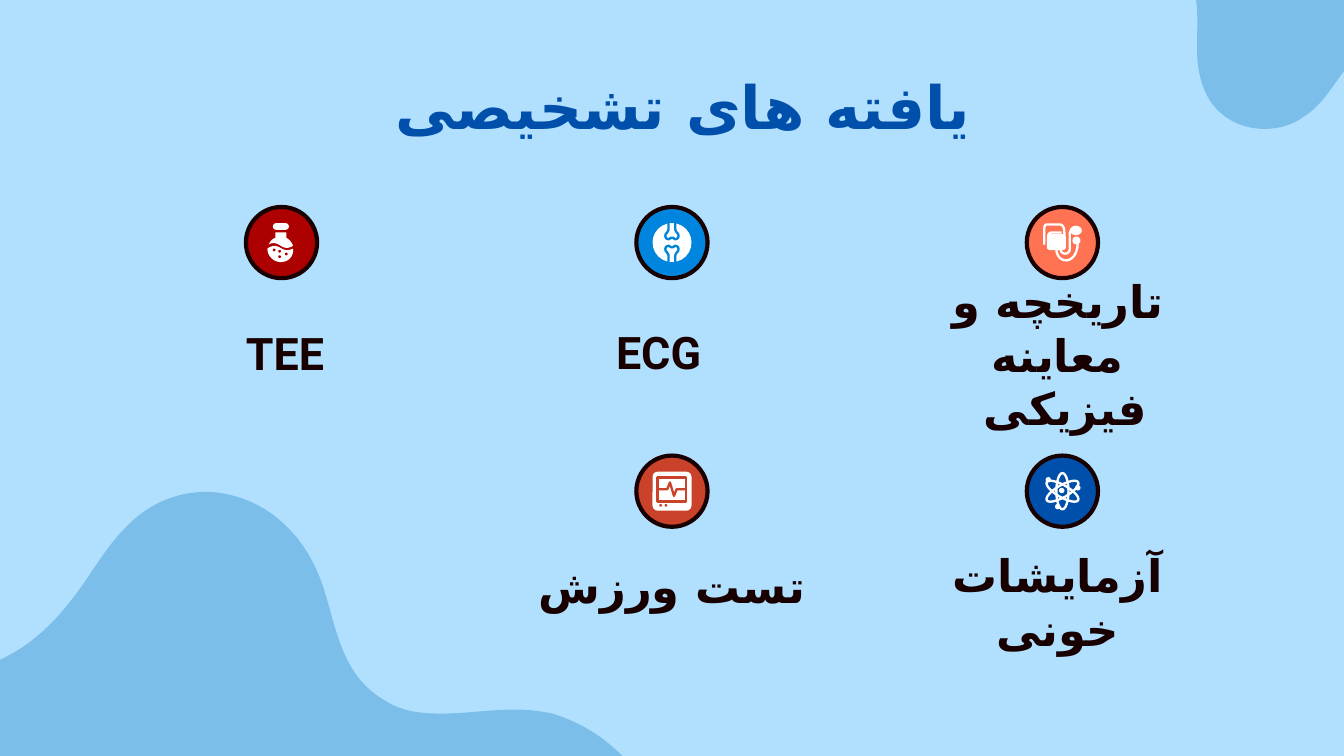
from lxml.etree import SubElement
from pptx import Presentation
from pptx.dml.color import RGBColor
from pptx.enum.shapes import MSO_SHAPE as SHAPE
from pptx.enum.text import MSO_ANCHOR as ANCHOR, PP_ALIGN as ALIGN
from pptx.oxml.ns import qn
from pptx.util import Inches, Pt

SKY, WAVE, INK, NAVY, WHITE = "B1E0FF", "7CBEEA", "180000", "004FAB", "FFFFFF"
PERSIAN_FONT = "DejaVu Sans"
WIDTH = 10
HEIGHT = WIDTH * 9 / 16
BADGE, ICON = 0.53, 0.29
COLS, ROWS = (1.83, (WIDTH - BADGE) / 2, 7.64), (1.54, 3.39)


def rgb(value):
    return RGBColor.from_string(value)


def paint(sp, fill=None, line=None, width=1.25):
    sp.shadow.inherit = False
    if fill:
        sp.fill.solid()
        sp.fill.fore_color.rgb = rgb(fill)
    else:
        sp.fill.background()
    if line:
        sp.line.color.rgb = rgb(line)
        sp.line.width = Pt(width)
    else:
        sp.line.fill.background()
    return sp


def preset(s, kind, x, y, w, h, **style):
    sp = s.shapes.add_shape(kind, Inches(x), Inches(y), Inches(w), Inches(h))
    return paint(sp, **style)


def dot(s, cx, cy, r, **style):
    return preset(s, SHAPE.OVAL, cx - r, cy - r, 2 * r, 2 * r, **style)


def trace(start, *parts, steps=12):
    """Turn lines (x, y) and cubic curves (x1, y1, x2, y2, x, y) into points."""
    pts = [start]
    for part in parts:
        if len(part) == 2:
            pts.append(part)
            continue
        ctrl = [pts[-1], part[:2], part[2:4], part[4:]]
        for i in range(1, steps + 1):
            t = i / steps
            weights = ((1 - t) ** 3, 3 * t * (1 - t) ** 2, 3 * t * t * (1 - t), t ** 3)
            pts.append(tuple(sum(k * c[axis] for k, c in zip(weights, ctrl))
                             for axis in (0, 1)))
    return pts


def outline(s, x, y, pts, close=True, **style):
    pts = [(Inches(x + px), Inches(y + py)) for px, py in pts]
    builder = s.shapes.build_freeform(*pts[0])
    builder.add_line_segments(pts[1:], close=close)
    return paint(builder.convert_to_shape(), **style)


def text_box(s, x, y, w, h, text, anchor=ANCHOR.MIDDLE, **font):
    tf = s.shapes.add_textbox(Inches(x), Inches(y), Inches(w), Inches(h)).text_frame
    frame = dict(word_wrap=True, vertical_anchor=anchor, margin_left=Inches(0.1),
                 margin_right=Inches(0.1), margin_top=Inches(0.1), margin_bottom=Inches(0.1))
    for name, value in frame.items():
        setattr(tf, name, value)
    p = tf.paragraphs[0]
    p.alignment = ALIGN.CENTER
    p._p.get_or_add_pPr().set("rtl", "1")
    r = p.add_run()
    r.text = text
    color = font.pop("color")
    for name, value in font.items():
        setattr(r.font, name, value)
    r.font.color.rgb = rgb(color)
    SubElement(r._r.get_or_add_rPr(), qn("a:cs"), typeface=PERSIAN_FONT)


def waves(s):
    bottom_left = trace(
        (1.53, 3.66), (1.36, 3.66, 1.18, 3.72, 1.04, 3.83), (0.86, 3.97, 0.74, 4.17, 0.61, 4.36),
        (0.46, 4.57, 0.29, 4.76, 0.06, 4.88), (0, 4.91), (0, HEIGHT), (4.63, HEIGHT),
        (4.49, 5.48, 4.31, 5.37, 4.11, 5.31), (4.02, 5.29, 3.92, 5.28, 3.83, 5.28),
        (3.65, 5.28, 3.46, 5.31, 3.28, 5.31), (3.12, 5.31, 2.98, 5.29, 2.86, 5.21),
        (2.74, 5.14, 2.65, 5.04, 2.59, 4.92), (2.46, 4.67, 2.45, 4.39, 2.31, 4.15),
        (2.19, 3.93, 1.98, 3.75, 1.74, 3.69), (1.67, 3.67, 1.6, 3.66, 1.53, 3.66))
    top_right = trace(
        (8.9, 0), (8.92, 0.13, 8.9, 0.3, 8.91, 0.45), (8.92, 0.56, 8.95, 0.67, 9.01, 0.76),
        (9.1, 0.89, 9.25, 0.96, 9.41, 0.96), (9.51, 0.96, 9.62, 0.93, 9.7, 0.87),
        (9.83, 0.79, 9.91, 0.65, WIDTH, 0.53), (WIDTH, 0))
    for pts in (bottom_left, top_right):
        outline(s, 0, 0, pts, fill=WAVE)


def flask_icon(s, x, y, color):
    cap = preset(s, SHAPE.ROUNDED_RECTANGLE, x + 0.08, y, 0.12, 0.05, fill=WHITE)
    cap.adjustments[0] = 0.5
    glass = trace((0.1, 0.07), (0.1, 0.11), (0.07, 0.12, 0.06, 0.14, 0.05, 0.16),
                  (0.08, 0.14, 0.11, 0.15, 0.14, 0.17), (0.17, 0.19, 0.2, 0.19, 0.23, 0.17),
                  (0.22, 0.14, 0.2, 0.12, 0.18, 0.11), (0.18, 0.07))
    liquid = trace((0.04, 0.19), (0.08, 0.16, 0.11, 0.17, 0.13, 0.18),
                   (0.16, 0.2, 0.19, 0.21, 0.23, 0.19), (0.24, 0.24, 0.2, 0.29, 0.14, 0.29),
                   (0.09, 0.29, 0.04, 0.25, 0.04, 0.19))
    for pts in (glass, liquid):
        outline(s, x, y, pts, fill=WHITE)
    for cx, cy in ((0.09, 0.2), (0.13, 0.21), (0.18, 0.23), (0.13, 0.25)):
        dot(s, x + cx, y + cy, 0.01, fill=color)


def joint_icon(s, x, y, color):
    preset(s, SHAPE.OVAL, x, y, ICON, ICON, fill=WHITE)
    half = trace((0.12, -0.01), (0.12, 0.04), (0.12, 0.06, 0.11, 0.07, 0.1, 0.08),
                 (0.09, 0.1, 0.1, 0.12, 0.12, 0.12), (0.13, 0.12, 0.13, 0.11, 0.14, 0.11))
    upper = half + [(ICON - px, py) for px, py in reversed(half)]
    lower = [(px, ICON - py) for px, py in upper]
    for bone in (upper, lower):
        outline(s, x, y, bone, fill=WHITE, line=color)


def monitor_icon(s, x, y, color):
    case = preset(s, SHAPE.ROUNDED_RECTANGLE, x, y, ICON, ICON, fill=WHITE)
    case.adjustments[0] = 0.13
    preset(s, SHAPE.RECTANGLE, x + 0.04, y + 0.04, 0.21, 0.18, line=color, width=1.5)
    pulse = [(0.04, 0.13), (0.11, 0.13), (0.13, 0.08), (0.16, 0.18), (0.18, 0.13), (0.25, 0.13)]
    outline(s, x, y, pulse, close=False, line=color)
    for cx in (0.06, 0.1):
        dot(s, x + cx, y + 0.25, 0.01, fill=color)


def atom_icon(s, x, y, color):
    for angle in (0, 60, 120):
        orbit = preset(s, SHAPE.OVAL, x + 0.1, y + 0.01, 0.09, 0.27, line=WHITE)
        orbit.rotation = angle
    for cx, cy, r in ((0.14, 0.14, 0.02), (0.04, 0.06, 0.02), (0.26, 0.12, 0.02), (0.11, 0.26, 0.02)):
        dot(s, x + cx, y + cy, r, fill=WHITE)


def pressure_icon(s, x, y, color):
    cuff = trace((0.01, 0.16), (0.01, 0.04), (0.01, 0.02, 0.02, 0.01, 0.03, 0.01), (0.12, 0.01),
                 (0.15, 0.01, 0.16, 0.03, 0.16, 0.09))
    fold = trace((0.04, 0.12), (0.04, 0.1), (0.04, 0.08, 0.05, 0.07, 0.07, 0.07), (0.14, 0.07))
    tube = trace((0.1, 0.19), (0.1, 0.31, 0.26, 0.32, 0.26, 0.14))
    hose = trace((0.13, 0.19), (0.13, 0.24, 0.2, 0.24, 0.2, 0.19), (0.2, 0.08),
                 (0.2, 0.06, 0.21, 0.05, 0.24, 0.05))
    for pts in (cuff, fold, tube, hose):
        outline(s, x, y, pts, close=False, line=WHITE)
    preset(s, SHAPE.ROUNDED_RECTANGLE, x + 0.03, y + 0.08, 0.14, 0.12, fill=WHITE)
    preset(s, SHAPE.OVAL, x + 0.2, y + 0.02, 0.09, 0.07, fill=WHITE)
    dot(s, x + 0.25, y + 0.13, 0.03, fill=WHITE)


def finding(s, x, y, color, icon, label, label_x, label_y):
    preset(s, SHAPE.OVAL, x, y, BADGE, BADGE, fill=color, line=INK, width=2.25)
    inset = (BADGE - ICON) / 2
    icon(s, x + inset, y + inset, color)
    text_box(s, label_x, label_y, 2.26, 0.41, label,
             name="Roboto", size=Pt(24), bold=True, color=INK)


def main():
    prs = Presentation()
    prs.slide_width, prs.slide_height = Inches(WIDTH), Inches(HEIGHT)
    s = prs.slides.add_slide(prs.slide_layouts[6])
    s.background.fill.solid()
    s.background.fill.fore_color.rgb = rgb(SKY)
    waves(s)
    text_box(s, 0.79, 0.42, 8.43, 0.65, "یافته های تشخیصی ", anchor=ANCHOR.TOP,
             name="Lato", size=Pt(32), bold=True, color=NAVY)
    findings = (
        (2, 0, "FF7352", pressure_icon, "تاریخچه و معاینه فیزیکی ", 6.74, 2.43),
        (1, 0, "0085DE", joint_icon, "ECG", 3.77, 2.41),
        (0, 0, "AD0101", flask_icon, "TEE", 0.99, 2.42),
        (2, 1, NAVY, atom_icon, "آزمایشات خونی", 6.74, 4.27),
        (1, 1, "CA4229", monitor_icon, "تست ورزش ", 3.87, 4.15),
    )
    for col, row, *details in findings:
        finding(s, COLS[col], ROWS[row], *details)
    prs.save("out.pptx")


if __name__ == "__main__":
    main()
